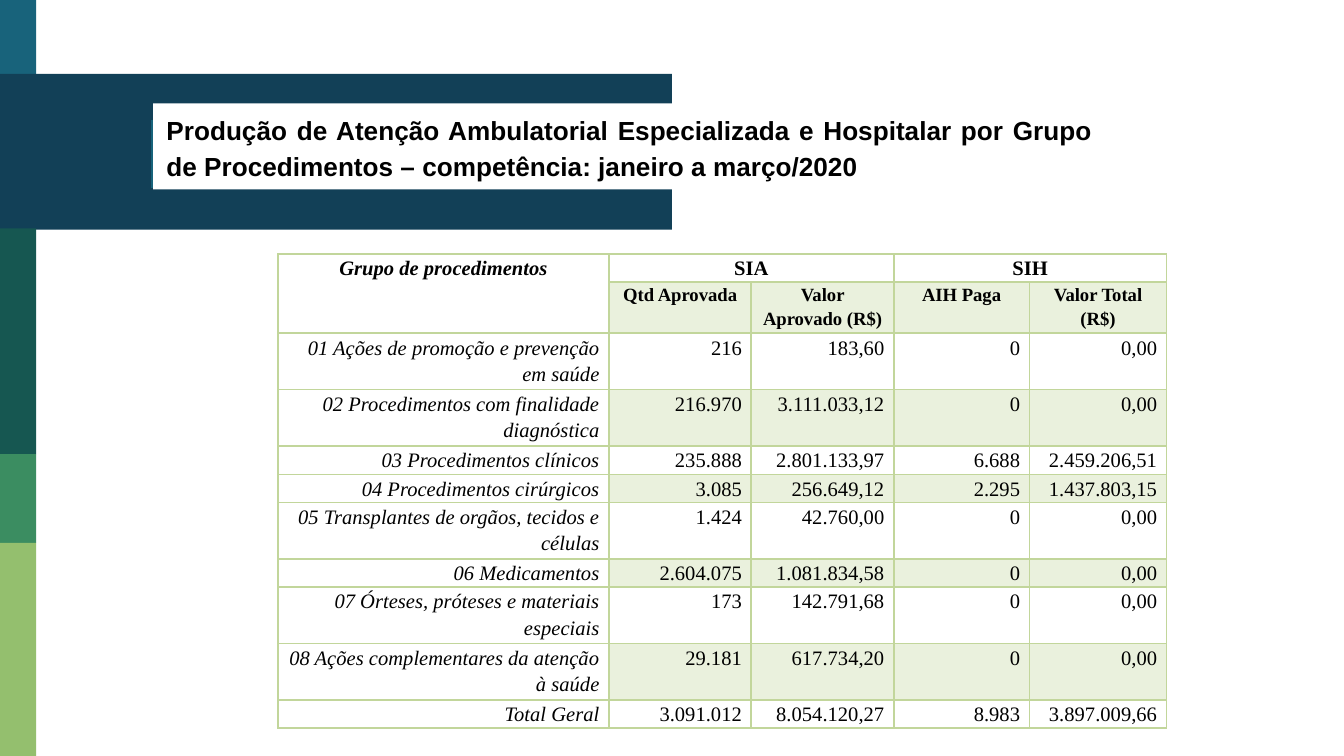
from dataclasses import dataclass

import pptx
import pptx.dml.color
import pptx.enum.shapes
import pptx.enum.text
import pptx.oxml
import pptx.oxml.ns
import pptx.util

Inches = pptx.util.Inches
Pt = pptx.util.Pt
RGBColor = pptx.dml.color.RGBColor
Align = pptx.enum.text.PP_ALIGN

BLUE = RGBColor(0x18, 0x63, 0x7B)
NAVY = RGBColor(0x12, 0x40, 0x57)
TEAL = RGBColor(0x16, 0x57, 0x51)
GREEN = RGBColor(0x3B, 0x8D, 0x61)
LIME = RGBColor(0x94, 0xBF, 0x6E)
WHITE = RGBColor(0xFF, 0xFF, 0xFF)
BLACK = RGBColor(0, 0, 0)
PALE = RGBColor(0xEA, 0xF1, 0xDD)
BORDER = RGBColor(0xC2, 0xD6, 0x9B)

TITLE = ("Produção de Atenção Ambulatorial Especializada e Hospitalar por Grupo "
         "de Procedimentos – competência: janeiro a março/2020")
COLUMN_WIDTHS = [2.46, 1.06, 1.06, 1.01, 1.02]
ONE_LINE, HEADING_LINES, TWO_LINES = 0.21, 0.38, 0.42
HEADINGS = ["Qtd Aprovada", "Valor Aprovado (R$)", "AIH Paga", "Valor Total (R$)"]


@dataclass
class Block:
    left: float
    top: float
    width: float
    height: float
    color: RGBColor


@dataclass
class Group:
    name: str
    values: list[str]
    height: float = ONE_LINE


@dataclass
class Style:
    font: str
    size: float
    align: Align
    bold: bool = False
    italic: bool = False


BLOCKS = [
    Block(0, 0, 0.27, 0.58, BLUE),
    Block(0, 0.55, 5, 1.16, NAVY),
    Block(0, 1.7, 0.27, 1.68, TEAL),
    Block(0, 3.38, 0.27, 0.66, GREEN),
    Block(0, 4.04, 0.27, 1.59, LIME),
]
TITLE_BLOCK = Block(1.14, 0.77, 7.09, 0.64, WHITE)

GROUPS = [
    Group("01 Ações de promoção e prevenção em saúde",
          ["216", "183,60", "0", "0,00"], TWO_LINES),
    Group("02 Procedimentos com finalidade diagnóstica",
          ["216.970", "3.111.033,12", "0", "0,00"], TWO_LINES),
    Group("03 Procedimentos clínicos",
          ["235.888", "2.801.133,97", "6.688", "2.459.206,51"]),
    Group("04 Procedimentos cirúrgicos",
          ["3.085", "256.649,12", "2.295", "1.437.803,15"]),
    Group("05 Transplantes de orgãos, tecidos e células",
          ["1.424", "42.760,00", "0", "0,00"], TWO_LINES),
    Group("06 Medicamentos", ["2.604.075", "1.081.834,58", "0", "0,00"]),
    Group("07 Órteses, próteses e materiais especiais",
          ["173", "142.791,68", "0", "0,00"], TWO_LINES),
    Group("08 Ações complementares da atenção à saúde",
          ["29.181", "617.734,20", "0", "0,00"], TWO_LINES),
    Group("Total Geral", ["3.091.012", "8.054.120,27", "8.983", "3.897.009,66"]),
]

SERIF = "Times New Roman"
TITLE_STYLE = Style("Arial", 14, Align.JUSTIFY, bold=True)
CORNER_STYLE = Style(SERIF, 11, Align.CENTER, bold=True, italic=True)
SYSTEM_STYLE = Style(SERIF, 11, Align.CENTER, bold=True)
HEADING_STYLE = Style(SERIF, 10, Align.CENTER, bold=True)
NAME_STYLE = Style(SERIF, 11, Align.RIGHT, italic=True)
VALUE_STYLE = Style(SERIF, 11, Align.RIGHT)


def write(tf, text: str, style: Style) -> None:
    tf.word_wrap = True
    p = tf.paragraphs[0]
    p.alignment = style.align
    p.line_spacing = 1.15
    r = p.add_run()
    r.text = text
    r.font.name = style.font
    r.font.size = Pt(style.size)
    r.font.bold = style.bold
    r.font.italic = style.italic
    r.font.color.rgb = BLACK


def add_block(s, block: Block):
    sp = s.shapes.add_shape(
        pptx.enum.shapes.MSO_SHAPE.RECTANGLE, Inches(block.left), Inches(block.top),
        Inches(block.width), Inches(block.height))
    sp.shadow.inherit = False
    sp.fill.solid()
    sp.fill.fore_color.rgb = block.color
    sp.line.fill.background()
    return sp


def add_title_rule(s) -> None:
    line = s.shapes.add_connector(
        pptx.enum.shapes.MSO_CONNECTOR.STRAIGHT,
        Inches(1.13), Inches(0.89), Inches(1.13), Inches(1.4))
    line.line.color.rgb = BLUE
    line.line.width = Pt(0.75)
    line._element.spPr.append(pptx.oxml.parse_xml(
        f'<a:effectLst {pptx.oxml.ns.nsdecls("a")}/>'))


def set_borders(cell) -> None:
    tcPr = cell._tc.get_or_add_tcPr()
    for i, side in enumerate(("lnL", "lnR", "lnT", "lnB")):
        tcPr.insert(i, pptx.oxml.parse_xml(
            f'<a:{side} {pptx.oxml.ns.nsdecls("a")} w="{Pt(1)}"><a:solidFill>'
            f'<a:srgbClr val="{BORDER}"/></a:solidFill></a:{side}>'))


def fill_cell(cell, text: str, style: Style, color: RGBColor) -> None:
    cell.margin_left = cell.margin_right = Inches(0.07)
    cell.margin_top = cell.margin_bottom = 0
    cell.fill.solid()
    cell.fill.fore_color.rgb = color
    write(cell.text_frame, text, style)


def add_production_table(s) -> None:
    heights = [ONE_LINE, HEADING_LINES] + [group.height for group in GROUPS]
    table = s.shapes.add_table(
        len(heights), len(COLUMN_WIDTHS), Inches(2.07), Inches(1.89),
        Inches(sum(COLUMN_WIDTHS)), Inches(sum(heights))).table
    table.first_row = table.horz_banding = False
    for column, width in zip(table.columns, COLUMN_WIDTHS):
        column.width = Inches(width)
    for row, height in zip(table.rows, heights):
        row.height = Inches(height)
    for cell in table.iter_cells():
        set_borders(cell)

    table.cell(0, 0).merge(table.cell(1, 0))
    fill_cell(table.cell(0, 0), "Grupo de procedimentos", CORNER_STYLE, WHITE)
    for col, system in ((1, "SIA"), (3, "SIH")):
        table.cell(0, col).merge(table.cell(0, col + 1))
        fill_cell(table.cell(0, col), system, SYSTEM_STYLE, WHITE)
    for col, heading in enumerate(HEADINGS, 1):
        fill_cell(table.cell(1, col), heading, HEADING_STYLE, PALE)
    for row, group in enumerate(GROUPS, 2):
        fill_cell(table.cell(row, 0), group.name, NAME_STYLE, WHITE)
        for col, value in enumerate(group.values, 1):
            fill_cell(table.cell(row, col), value, VALUE_STYLE, PALE if row % 2 else WHITE)


def main() -> None:
    prs = pptx.Presentation()
    prs.slide_width = Inches(10)
    prs.slide_height = prs.slide_width * 9 // 16
    s = prs.slides.add_slide(prs.slide_layouts[6])
    for block in BLOCKS:
        add_block(s, block)
    add_title_rule(s)
    title = add_block(s, TITLE_BLOCK)
    title.text_frame.vertical_anchor = pptx.enum.text.MSO_ANCHOR.TOP
    write(title.text_frame, TITLE, TITLE_STYLE)
    add_production_table(s)
    prs.save("out.pptx")


if __name__ == "__main__":
    main()
